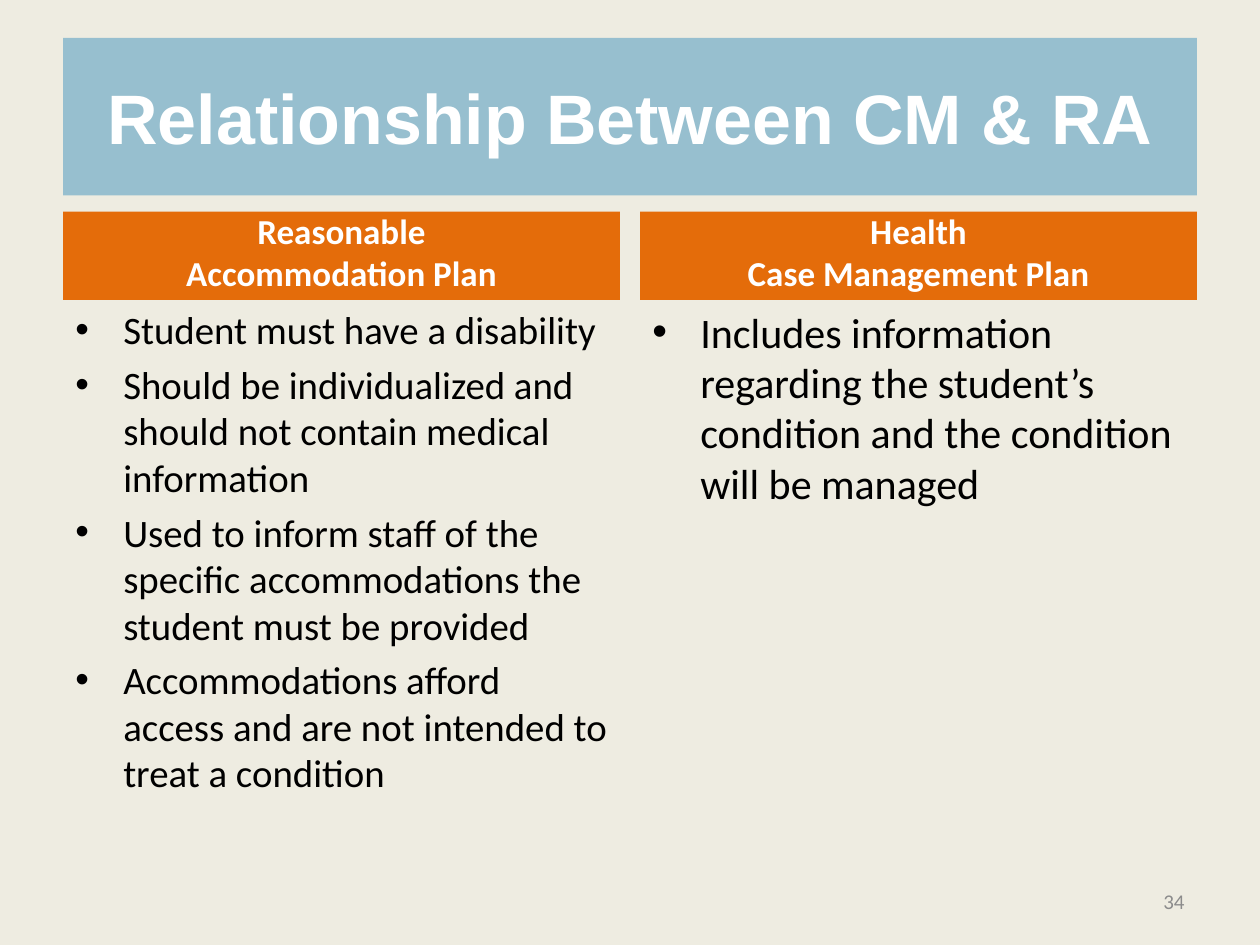
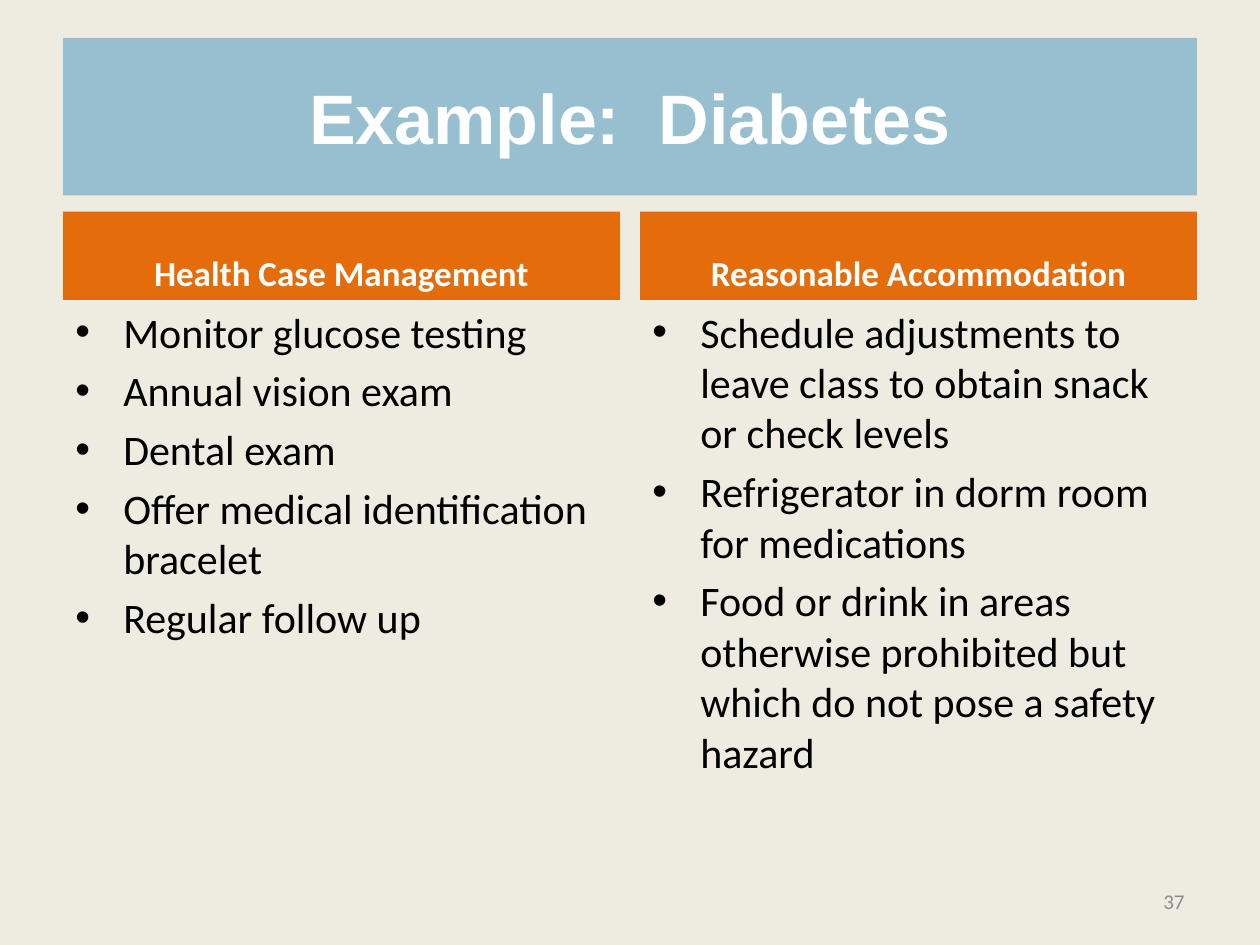
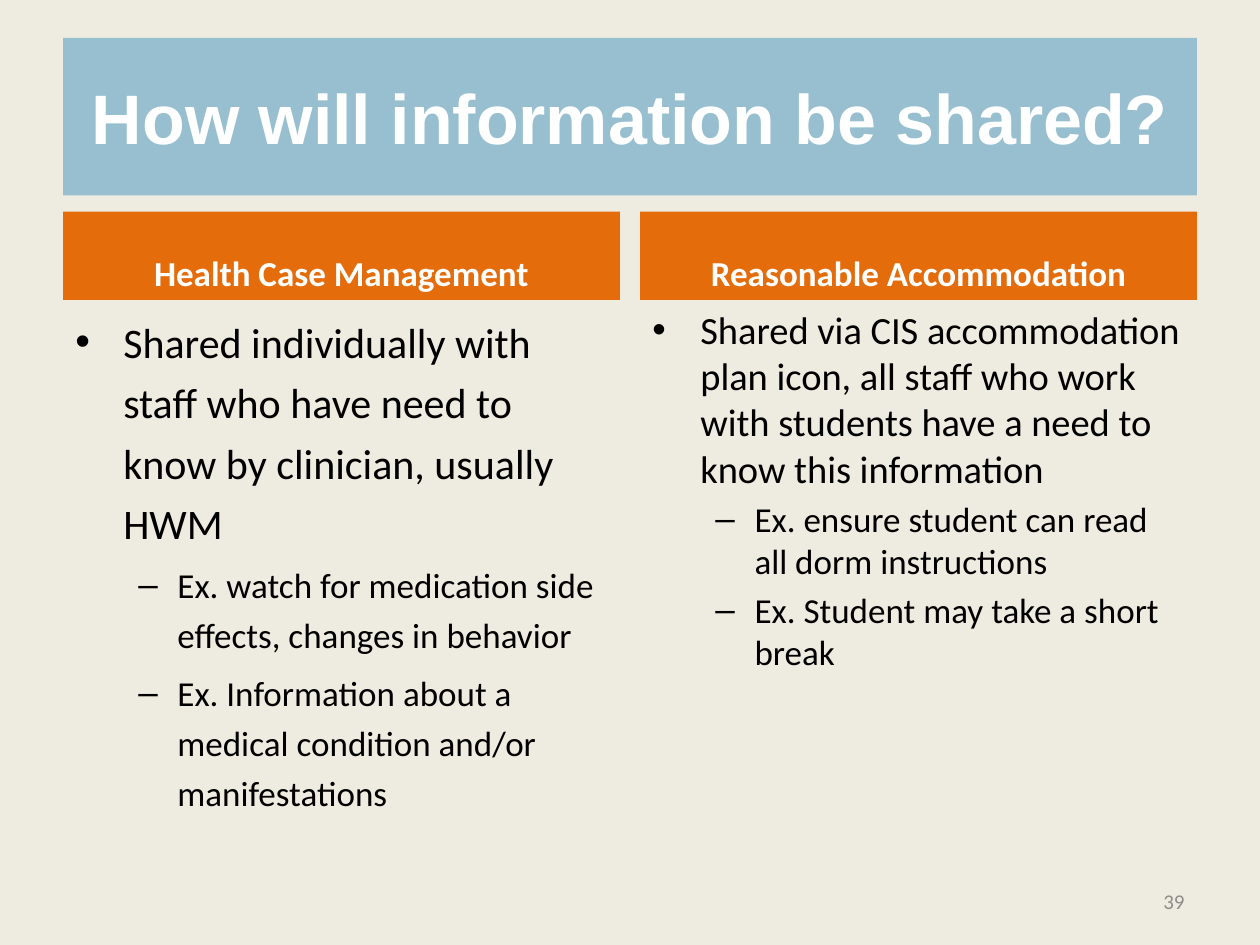
from dataclasses import dataclass

from lxml import etree
from pptx import Presentation
from pptx.dml.color import RGBColor
from pptx.enum import shapes, text
from pptx.oxml import ns
from pptx.util import Inches, Pt

CREAM = RGBColor(0xEE, 0xEC, 0xE1)
BLUE = RGBColor(0x97, 0xBF, 0xCF)
ORANGE = RGBColor(0xE4, 0x6C, 0x0A)
WHITE = RGBColor(0xFF, 0xFF, 0xFF)
BLACK = RGBColor(0, 0, 0)
GREY = RGBColor(0x8C, 0x8C, 0x8C)

TITLE_FONT = {"name": "Arial", "size": Pt(40), "bold": True, "color": WHITE}
HEADING_FONT = {"name": "Calibri", "size": Pt(20), "bold": True, "color": WHITE}
NUMBER_FONT = {"name": "Calibri", "size": Pt(12), "color": GREY}

MARGIN = 0.5
CONTENT_WIDTH = 9
COLUMN_WIDTH = 4.42
COLUMN_TOP = 1.68
HEADING_HEIGHT = 0.7
LEVELS = [("•", 0.38, 0.38), ("–", 0.81, 0.31)]
SUBPOINT_SIZE = 20


@dataclass
class Column:
    heading: list
    points: list
    size: float = 24
    line_spacing: float = 1.0
    body_height: float = 4.32


def write(para, words, font):
    span = para.add_run()
    span.text = words
    for key, value in font.items():
        if key == "color":
            span.font.color.rgb = value
        else:
            setattr(span.font, key, value)


def prepare(box, anchor):
    frame = box.text_frame
    frame.word_wrap = True
    frame.auto_size = text.MSO_AUTO_SIZE.NONE
    frame.vertical_anchor = anchor
    return frame


def write_lines(box, lines, font, align, anchor):
    frame = prepare(box, anchor)
    for index, line in enumerate(lines):
        para = frame.add_paragraph() if index else frame.paragraphs[0]
        para.alignment = align
        write(para, line, font)


def set_bullet(para, level):
    mark, left, hanging = LEVELS[level]
    para.level = level
    properties = para._p.get_or_add_pPr()
    properties.set("marL", str(Inches(left)))
    properties.set("indent", str(-Inches(hanging)))
    etree.SubElement(properties, ns.qn("a:buFont")).set("typeface", "Arial")
    etree.SubElement(properties, ns.qn("a:buChar")).set("char", mark)


def add_title(page, words):
    title = page.shapes.title
    title.left, title.top = Inches(MARGIN), Inches(0.3)
    title.width, title.height = Inches(CONTENT_WIDTH), Inches(1.25)
    title.fill.solid()
    title.fill.fore_color.rgb = BLUE
    write_lines(title, [words], TITLE_FONT, text.PP_ALIGN.CENTER, text.MSO_ANCHOR.MIDDLE)


def add_column(page, left, top, width, column):
    heading = page.shapes.add_shape(
        shapes.MSO_SHAPE.RECTANGLE,
        Inches(left), Inches(top), Inches(width), Inches(HEADING_HEIGHT))
    heading.shadow.inherit = False
    heading.fill.solid()
    heading.fill.fore_color.rgb = ORANGE
    heading.line.fill.background()
    write_lines(heading, column.heading, HEADING_FONT,
                text.PP_ALIGN.CENTER, text.MSO_ANCHOR.BOTTOM)

    body = page.shapes.add_textbox(
        Inches(left), Inches(top + HEADING_HEIGHT),
        Inches(width), Inches(column.body_height))
    frame = prepare(body, text.MSO_ANCHOR.TOP)
    for index, (level, words) in enumerate(column.points):
        para = frame.add_paragraph() if index else frame.paragraphs[0]
        size = SUBPOINT_SIZE if level else column.size
        set_bullet(para, level)
        para.line_spacing = column.line_spacing
        para.space_before = Pt(0.2 * size if index else 0)
        write(para, words, {"name": "Calibri", "size": Pt(size), "color": BLACK})


def add_number(page, number):
    box = page.shapes.add_textbox(Inches(7.17), Inches(6.95), Inches(2.33), Inches(0.4))
    write_lines(box, [str(number)], NUMBER_FONT, text.PP_ALIGN.RIGHT, text.MSO_ANCHOR.MIDDLE)


def add_comparison(deck, title, number, columns):
    page = deck.slides.add_slide(deck.slide_layouts[5])
    add_title(page, title)
    step = CONTENT_WIDTH - COLUMN_WIDTH
    for index, column in enumerate(columns):
        add_column(page, MARGIN + index * step, COLUMN_TOP, COLUMN_WIDTH, column)
    add_number(page, number)


MANAGEMENT = ["Health Case Management"]
ACCOMMODATION = ["Reasonable Accommodation"]

PAGES = [
    ("Relationship Between CM & RA", 34, [
        Column(["Reasonable", "Accommodation Plan"], [
            (0, "Student must have a disability"),
            (0, "Should be individualized and should not contain medical information"),
            (0, "Used to inform staff of the specific accommodations the student must be provided"),
            (0, "Accommodations afford access and are not intended to treat a condition"),
        ], size=22.2, body_height=4.62),
        Column(["Health", "Case Management Plan"], [
            (0, "Includes information regarding the student’s condition and the condition "
                "will be managed"),
        ]),
    ]),
    ("Example:  Diabetes", 37, [
        Column(MANAGEMENT, [
            (0, "Monitor glucose testing"),
            (0, "Annual vision exam"),
            (0, "Dental exam"),
            (0, "Offer medical identification bracelet"),
            (0, "Regular follow up"),
        ]),
        Column(ACCOMMODATION, [
            (0, "Schedule adjustments to leave class to obtain snack or check levels"),
            (0, "Refrigerator in dorm room for medications"),
            (0, "Food or drink in areas otherwise prohibited but which do not pose "
                "a safety hazard"),
        ]),
    ]),
    ("How will information be shared?", 39, [
        Column(MANAGEMENT, [
            (0, "Shared individually with staff who have need to know by clinician, usually HWM"),
            (1, "Ex. watch for medication side effects, changes in behavior"),
            (1, "Ex. Information about a medical condition and/or manifestations"),
        ], line_spacing=1.2),
        Column(ACCOMMODATION, [
            (0, "Shared via CIS accommodation plan icon, all staff who work with students "
                "have a need to know this information"),
            (1, "Ex. ensure student can read all dorm instructions"),
            (1, "Ex. Student may take a short break"),
        ], size=22),
    ]),
]


def main():
    deck = Presentation()
    deck.slide_width, deck.slide_height = Inches(10), Inches(7.5)
    background = deck.slide_master.background.fill
    background.solid()
    background.fore_color.rgb = CREAM
    for title, number, columns in PAGES:
        add_comparison(deck, title, number, columns)
    deck.save("out.pptx")


if __name__ == "__main__":
    main()
